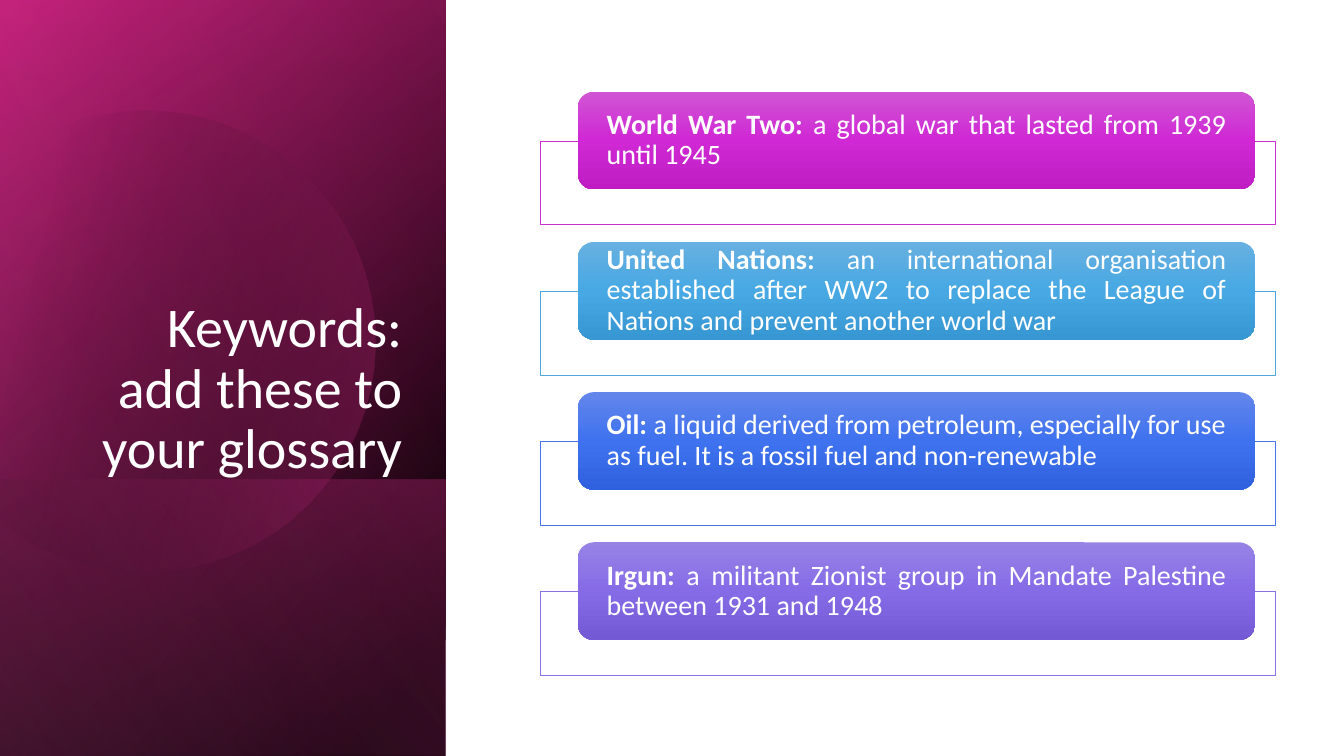
from math import cos, radians, sin

from lxml.etree import SubElement
from pptx import Presentation
from pptx.dml.color import RGBColor
from pptx.enum.shapes import MSO_SHAPE
from pptx.enum.text import MSO_ANCHOR, PP_ALIGN
from pptx.oxml.ns import qn
from pptx.util import Inches, Pt

FONT = "Calibri"
COLORS = {
    "white": "FFFFFF",
    "black": "000000",
    "berry": "B4186E",
    "pink": "E32D91",
    "rose": "EE81BD",
}

PANEL = (-1.54, 1.54, 7.5, 4.42)
PANEL_LAYERS = [
    (PANEL, [(8, "black", 100), (100, "berry", 100)], 50),
    (PANEL, [(0, "black", 0), (99, "pink", 46)], 30),
    ((0.84, 3.92, 2.74, 4.42), [(2, "pink", 29), (100, "black", 30)], 130),
]
SHEEN = (PANEL, [(0, "black", 0), (99, "rose", 11)], 120)

DISC_CENTER = (1.585, 3.345)
DISC_ROTATION = 343.9
DISC_START = (1.49, 1.1)
DISC_CURVES = [
    [(2.46, 1.12), (3.35, 1.77), (3.63, 2.75)],
    [(3.98, 3.97), (3.28, 5.23), (2.07, 5.58)],
    [(1.31, 5.8), (0.53, 5.61), (-0.03, 5.14)],
    [(-0.15, 5.03)],
    [(-0.15, 1.75)],
    [(0, 1.61)],
    [(0.23, 1.42), (0.5, 1.28), (0.8, 1.19)],
    [(1.03, 1.13), (1.26, 1.1), (1.49, 1.1)],
]

KEYWORDS = [
    ("World War Two: ", "a global war that lasted from 1939 until 1945",
     "C830CC", ("D055D4", "CF28D4", "BF1DC3")),
    ("United Nations: ", "an international organisation established after WW2 "
     "to replace the League of Nations and prevent another world war",
     "4EA6DC", ("68B0E1", "47A8E3", "3797D2")),
    ("Oil: ", "a liquid derived from petroleum, especially for use as fuel. "
     "It is a fossil fuel and non-renewable",
     "4775E7", ("6386EB", "3F72EF", "2F61DE")),
    ("Irgun: ", "a militant Zionist group in Mandate Palestine between 1931 and 1948",
     "8971E1", ("9783E6", "866BE7", "7359D4")),
]
FIRST_CARD_TOP = 0.91
CARD_PITCH = 1.49


def rgb(color):
    return RGBColor.from_string(COLORS.get(color, color))


def fill_gradient(shape, stops, angle):
    shape.fill.gradient()
    gradient = shape.element.spPr.find(qn("a:gradFill"))
    stop_list = gradient.find(qn("a:gsLst"))
    for default_stop in list(stop_list):
        stop_list.remove(default_stop)
    for position, color, opacity in stops:
        stop = SubElement(stop_list, qn("a:gs"), pos=str(position * 1000))
        tint = SubElement(stop, qn("a:srgbClr"), val=COLORS.get(color, color))
        if opacity < 100:
            SubElement(tint, qn("a:alpha"), val=str(opacity * 1000))
    gradient.find(qn("a:lin")).set("ang", str(angle * 60000))


def add_plain_shape(slide, kind, box):
    shape = slide.shapes.add_shape(kind, *[Inches(length) for length in box])
    shape.shadow.inherit = False
    shape.line.fill.background()
    return shape


def add_panel_layer(slide, box, stops, angle):
    layer = add_plain_shape(slide, MSO_SHAPE.RECTANGLE, box)
    layer.rotation = 90
    layer.element.spPr.find(qn("a:xfrm")).set("flipH", "1")
    fill_gradient(layer, stops, angle)


def curve_points(start, controls, steps=16):
    if len(controls) == 1:
        return controls
    points = []
    for step in range(1, steps + 1):
        t = step / steps
        weights = ((1 - t) ** 3, 3 * t * (1 - t) ** 2, 3 * t * t * (1 - t), t ** 3)
        points.append(tuple(
            sum(w * p[axis] for w, p in zip(weights, [start, *controls]))
            for axis in (0, 1)))
    return points


def unrotate(point):
    angle = radians(-DISC_ROTATION)
    dx, dy = point[0] - DISC_CENTER[0], point[1] - DISC_CENTER[1]
    return (Inches(DISC_CENTER[0] + dx * cos(angle) - dy * sin(angle)),
            Inches(DISC_CENTER[1] + dx * sin(angle) + dy * cos(angle)))


def add_disc(slide):
    outline = [DISC_START]
    for controls in DISC_CURVES:
        outline += curve_points(outline[-1], controls)
    start, *rest = [unrotate(point) for point in outline]
    builder = slide.shapes.build_freeform(*start)
    builder.add_line_segments(rest, close=True)
    disc = builder.convert_to_shape()
    disc.rotation = DISC_ROTATION
    disc.shadow.inherit = False
    disc.line.fill.background()
    fill_gradient(disc, [(29, "black", 0), (100, "pink", 43)], 30)


def format_run(run, size, bold=False):
    run.font.name = FONT
    run.font.size = Pt(size)
    run.font.bold = bold
    run.font.color.rgb = rgb("white")


def add_title(slide):
    title = slide.shapes.title
    title.left, title.top = Inches(0.68), Inches(2.2)
    title.width, title.height = Inches(3.41), Inches(2.62)
    title.text_frame.word_wrap = True
    title.text_frame.vertical_anchor = MSO_ANCHOR.BOTTOM
    heading = title.text_frame.paragraphs[0]
    heading.text = "Keywords:\v add these to your glossary"
    heading.alignment = PP_ALIGN.RIGHT
    heading.line_spacing = 0.9
    for run in heading.runs:
        format_run(run, 40)
    tree = slide.shapes.element
    tree.remove(title.element)
    tree.append(title.element)


def add_keyword(slide, top, term, meaning, outline, shades):
    frame = add_plain_shape(slide, MSO_SHAPE.RECTANGLE, (5.36, top + 0.49, 7.29, 0.83))
    frame.fill.solid()
    frame.fill.fore_color.rgb = rgb("white")
    frame.line.color.rgb = rgb(outline)
    frame.line.width = Pt(0.5)

    card = add_plain_shape(slide, MSO_SHAPE.ROUNDED_RECTANGLE, (5.73, top, 6.72, 0.97))
    fill_gradient(card, [(i * 50, shade, 100) for i, shade in enumerate(shades)], 90)
    text = card.text_frame
    text.word_wrap = True
    text.vertical_anchor = MSO_ANCHOR.MIDDLE
    text.margin_left = text.margin_right = Inches(0.24)
    text.margin_top = text.margin_bottom = Inches(0.05)
    definition = text.paragraphs[0]
    definition.alignment = PP_ALIGN.JUSTIFY
    definition.line_spacing = 0.9
    for words, bold in ((term, True), (meaning, False)):
        run = definition.add_run()
        run.text = words
        format_run(run, 20, bold)


def main():
    deck = Presentation()
    deck.slide_width, deck.slide_height = Inches(13.33), Inches(7.5)
    slide = deck.slides.add_slide(deck.slide_layouts[5])
    for layer in PANEL_LAYERS:
        add_panel_layer(slide, *layer)
    add_disc(slide)
    add_panel_layer(slide, *SHEEN)
    add_title(slide)
    for row, keyword in enumerate(KEYWORDS):
        add_keyword(slide, FIRST_CARD_TOP + row * CARD_PITCH, *keyword)
    deck.save("out.pptx")


if __name__ == "__main__":
    main()
